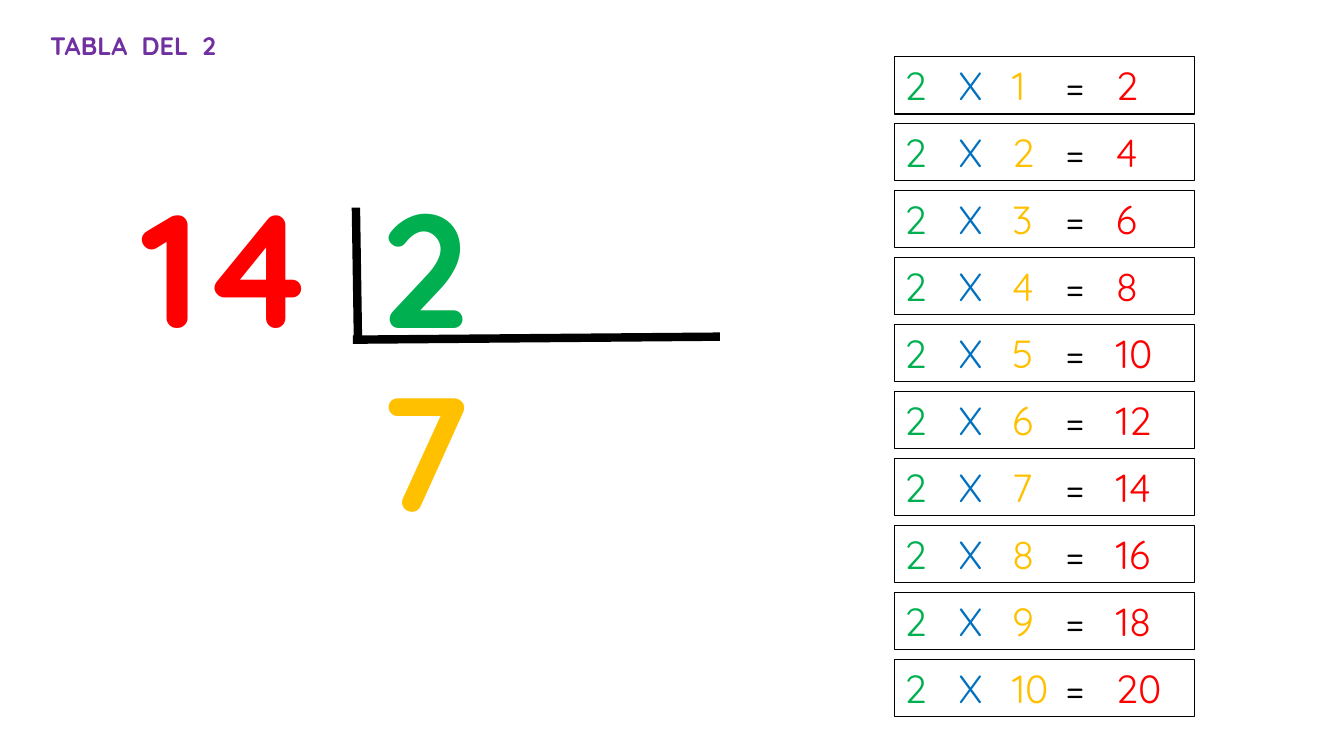
from lxml.etree import SubElement
from pptx import Presentation
from pptx.dml.color import RGBColor
from pptx.enum.shapes import MSO_CONNECTOR
from pptx.enum.text import MSO_AUTO_SIZE, PP_ALIGN
from pptx.oxml.ns import qn
from pptx.util import Inches, Pt

FONT = "Quicksand"
WHITE = RGBColor(0xFF, 0xFF, 0xFF)
BLACK = RGBColor(0x00, 0x00, 0x00)
GREEN = RGBColor(0x00, 0xB0, 0x50)
BLUE = RGBColor(0x00, 0x70, 0xC0)
YELLOW = RGBColor(0xFF, 0xC0, 0x00)
RED = RGBColor(0xFF, 0x00, 0x00)
PURPLE = RGBColor(0x70, 0x30, 0xA0)

FACTOR = 2
MULTIPLIERS = range(1, 11)

# text, colour, size, alignment, (left, top, width, height)
LABELS = [
    ("2", GREEN, 115, PP_ALIGN.CENTER, (3.62, 1.61, 1.18, 2.04)),
    ("14", RED, 115, PP_ALIGN.CENTER, (1.19, 1.61, 2.14, 2.04)),
    ("7", YELLOW, 115, PP_ALIGN.CENTER, (3.63, 3.43, 1.18, 2.04)),
    ("TABLA  DEL  2", PURPLE, 18, PP_ALIGN.LEFT, (0.4, 0.25, 2.63, 0.4)),
]

# x and y of both ends
DIVISION_LINES = [(3.53, 2.06, 3.55, 3.35), (3.5, 3.37, 7.14, 3.34)]

ROW_LEFT, ROW_WIDTH, ROW_HEIGHT = 8.87, 2.98, 0.57
FIRST_TOP, LAST_TOP = 0.56, 6.54
ROW_PITCH = (LAST_TOP - FIRST_TOP) / (len(MULTIPLIERS) - 1)
TAB_STOPS = [0.54, 1.07, 1.6, 2.1]


def add_text(slide, box, runs, size, bold=False, align=PP_ALIGN.LEFT):
    """Add a text box with one paragraph of (text, colour) runs."""
    sp = slide.shapes.add_textbox(*map(Inches, box))
    tf = sp.text_frame
    tf.word_wrap = True
    tf.auto_size = MSO_AUTO_SIZE.SHAPE_TO_FIT_TEXT
    p = tf.paragraphs[0]
    p.alignment = align
    for text, color in runs:
        r = p.add_run()
        r.text = text
        for name, value in {"name": FONT, "size": Pt(size), "bold": bold}.items():
            setattr(r.font, name, value)
        r.font.color.rgb = color
    return sp


def add_tab_stops(p, stops):
    tabs = SubElement(p._p.get_or_add_pPr(), qn("a:tabLst"))
    for stop in stops:
        SubElement(tabs, qn("a:tab"), pos=str(Inches(stop)), algn="l")


def add_division_bracket(slide):
    group = slide.shapes.add_group_shape()
    for ends in DIVISION_LINES:
        line = group.shapes.add_connector(MSO_CONNECTOR.STRAIGHT, *map(Inches, ends))
        line.line.color.rgb = BLACK
        line.line.width = Pt(6)
        SubElement(line._element.spPr, qn("a:effectLst"))


def add_product_row(slide, index, multiplier):
    box = (ROW_LEFT, FIRST_TOP + index * ROW_PITCH, ROW_WIDTH, ROW_HEIGHT)
    runs = [
        (f"{FACTOR}\t", GREEN),
        ("X\t", BLUE),
        (f"{multiplier}\t", YELLOW),
        ("=\t", BLACK),
        (str(FACTOR * multiplier), RED),
    ]
    sp = add_text(slide, box, runs, 28)
    add_tab_stops(sp.text_frame.paragraphs[0], TAB_STOPS)
    sp.fill.solid()
    sp.fill.fore_color.rgb = WHITE
    sp.line.color.rgb = BLACK
    sp.line.width = Pt(1)


def main():
    prs = Presentation()
    prs.slide_width, prs.slide_height = Inches(13.33), Inches(7.5)
    slide = prs.slides.add_slide(prs.slide_layouts[6])
    add_division_bracket(slide)
    for index, multiplier in enumerate(MULTIPLIERS):
        add_product_row(slide, index, multiplier)
    for text, color, size, align, box in LABELS:
        add_text(slide, box, [(text, color)], size, True, align)
    prs.save("out.pptx")


if __name__ == "__main__":
    main()
